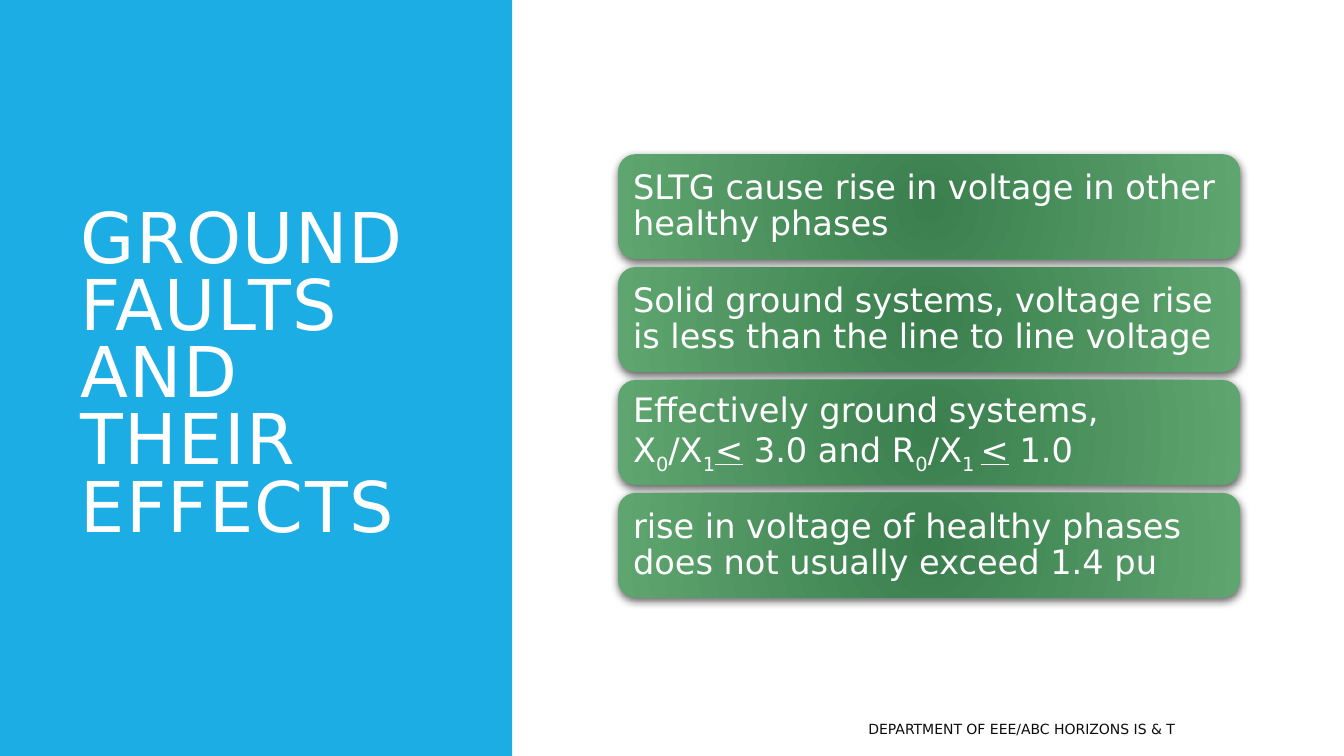
from lxml.etree import SubElement
from pptx import Presentation
from pptx.dml.color import RGBColor
from pptx.enum.shapes import MSO_SHAPE as Shape
from pptx.enum.text import MSO_ANCHOR as Anchor, PP_ALIGN as Align
from pptx.oxml import parse_xml
from pptx.oxml.ns import nsdecls, qn
from pptx.util import Inches, Pt

WIDTH, HEIGHT = Inches(13.33), Inches(7.5)
FONT = "DejaVu Sans"
BLUE = RGBColor(0x1C, 0xAD, 0xE4)
WHITE = RGBColor(0xFF, 0xFF, 0xFF)
BLACK = RGBColor(0x00, 0x00, 0x00)
NEAR_BLACK = RGBColor(0x0D, 0x0D, 0x0D)
DARK_GREEN = RGBColor(0x3A, 0x7F, 0x4D)
LIGHT_GREEN = RGBColor(0x5F, 0xA5, 0x6F)

# Card column: one card per row, rows at an equal pitch
CARD_LEFT, CARD_TOP = Inches(6.13), Inches(1.53)
CARD_WIDTH, CARD_HEIGHT = Inches(6.17), Inches(1.04)
CARD_PITCH = Inches(1.12)

# Each card is a list of (text, style) runs; "break" starts a new line
CARDS = [
    [("SLTG cause rise in voltage in other healthy phases", "")],
    [("Solid ground systems, voltage rise is less than the line to line voltage", "")],
    [("Effectively ground systems,", ""), ("", "break"),
     ("X", ""), ("0", "sub"), ("/X", ""), ("1", "sub"), ("<", "underline"),
     (" 3.0 and R", ""), ("0", "sub"), ("/X", ""), ("1 ", "sub"),
     ("<", "underline"), (" 1.0", "")],
    [("rise in voltage of healthy phases does not usually exceed 1.4 pu", "")],
]


def add_run(paragraph, text, size, color, style=""):
    run = paragraph.add_run()
    run.text = text
    run.font.name = FONT
    run.font.size = Pt(size)
    run.font.color.rgb = color
    if style == "sub":
        run.font._element.set("baseline", "-25000")
    elif style == "underline":
        run.font.underline = True
    return run


def add_text(slide, left, top, width, height, text, size, color):
    frame = slide.shapes.add_textbox(left, top, width, height).text_frame
    frame.word_wrap = True
    frame.vertical_anchor = Anchor.MIDDLE
    paragraph = frame.paragraphs[0]
    return paragraph, add_run(paragraph, text, size, color)


def add_panel(slide, width):
    panel = slide.shapes.add_shape(Shape.RECTANGLE, 0, 0, width, HEIGHT)
    panel.shadow.inherit = False
    panel.fill.solid()
    panel.fill.fore_color.rgb = BLUE
    panel.line.fill.background()


def style_card(card):
    """Radial green fill, no outline and a soft shadow below."""
    card.line.fill.background()
    card.shadow.inherit = False
    properties = card._element.spPr
    properties.find(qn("a:ln")).addprevious(parse_xml(
        f'<a:gradFill {nsdecls("a")} rotWithShape="1"><a:gsLst>'
        f'<a:gs pos="0"><a:srgbClr val="{DARK_GREEN}"/></a:gs>'
        f'<a:gs pos="100000"><a:srgbClr val="{LIGHT_GREEN}"/></a:gs></a:gsLst>'
        '<a:path path="circle"><a:fillToRect l="100000" t="100000" '
        'r="100000" b="100000"/></a:path></a:gradFill>'))
    shadow = SubElement(properties.find(qn("a:effectLst")), qn("a:outerShdw"),
                        blurRad=str(Pt(6)), dist=str(Pt(2)),
                        dir="5400000", rotWithShape="0")
    color = SubElement(shadow, qn("a:srgbClr"), val=str(BLACK))
    SubElement(color, qn("a:alpha"), val="60000")


def add_card(slide, row, runs):
    card = slide.shapes.add_shape(
        Shape.ROUNDED_RECTANGLE, CARD_LEFT, CARD_TOP + row * CARD_PITCH,
        CARD_WIDTH, CARD_HEIGHT)
    style_card(card)
    frame = card.text_frame
    frame.word_wrap = True
    frame.vertical_anchor = Anchor.MIDDLE
    frame.margin_left = frame.margin_right = Inches(0.1)
    frame.margin_top = frame.margin_bottom = Inches(0.1)
    paragraph = frame.paragraphs[0]
    paragraph.alignment = Align.LEFT
    paragraph.line_spacing = 0.9
    for text, style in runs:
        if style == "break":
            paragraph.add_line_break()
        else:
            add_run(paragraph, text, 24, WHITE, style)


def main():
    presentation = Presentation()
    presentation.slide_width, presentation.slide_height = WIDTH, HEIGHT
    slide = presentation.slides.add_slide(presentation.slide_layouts[6])

    # Title on the blue panel
    add_panel(slide, Inches(5.08))
    paragraph, run = add_text(
        slide, Inches(0.7), Inches(0.7), Inches(3.74), Inches(6.09),
        "GROUND FAULTS AND THEIR EFFECTS", 50, WHITE)
    paragraph.line_spacing = 0.8
    run.font._element.set("spc", "100")

    # Statement cards
    for row, runs in enumerate(CARDS):
        add_card(slide, row, runs)

    # Footer
    paragraph, _ = add_text(
        slide, Inches(5.3), Inches(7.08), Inches(6.45), Inches(0.3),
        "DEPARTMENT OF EEE/ABC HORIZONS IS & T", 10, NEAR_BLACK)
    paragraph.alignment = Align.RIGHT

    presentation.save("out.pptx")


if __name__ == "__main__":
    main()
